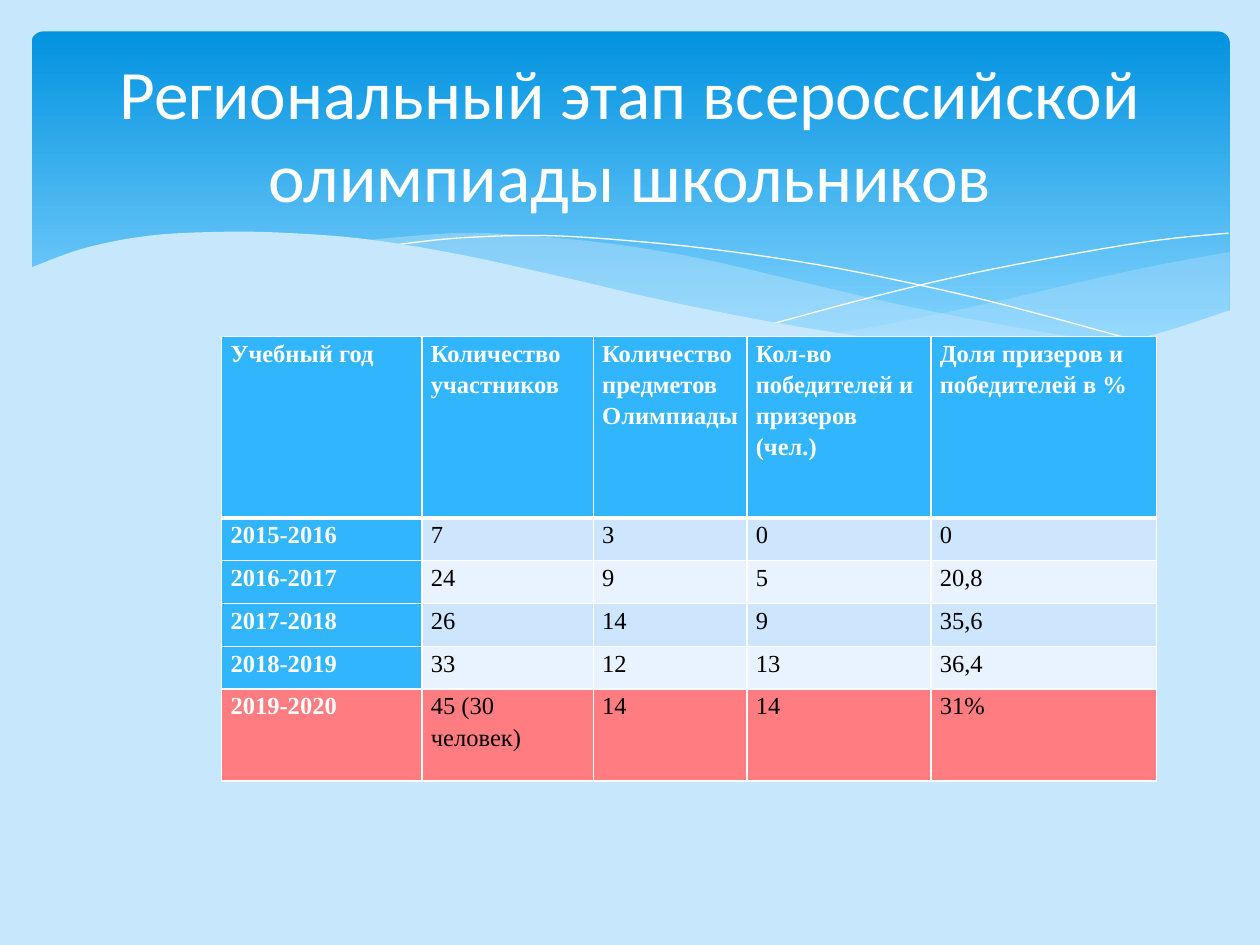
from dataclasses import dataclass

from lxml import etree
from pptx import Presentation
from pptx.dml.color import RGBColor
from pptx.enum.shapes import MSO_SHAPE
from pptx.enum.text import MSO_ANCHOR, PP_ALIGN
from pptx.oxml.ns import qn
from pptx.util import Inches, Pt

ROUNDED = MSO_SHAPE.ROUNDED_RECTANGLE
MIDDLE = MSO_ANCHOR.MIDDLE
LEFT, CENTER, JUSTIFY = PP_ALIGN.LEFT, PP_ALIGN.CENTER, PP_ALIGN.JUSTIFY


@dataclass(frozen=True)
class Theme:
    sky: str = "C6E7FC"
    banner_top: str = "0293E0"
    banner_bottom: str = "83D3FE"
    white: str = "FFFFFF"
    black: str = "000000"
    header: str = "31B6FD"
    bands: tuple = ("CEE5FE", "E8F3FF")
    highlight: str = "FF7C80"
    title_font: str = "Calibri"
    table_font: str = "Times New Roman"
    title_size: float = 39.6
    table_size: float = 14


TITLE = "Региональный этап всероссийской олимпиады школьников"
HEADINGS = ["Учебный год", "Количество участников", "Количество предметов Олимпиады",
            "Кол-во победителей и призеров (чел.)", "Доля призеров и победителей в %"]
RESULTS = [
    ["2015-2016", "7", "3", "0", "0"],
    ["2016-2017", "24", "9", "5", "20,8"],
    ["2017-2018", "26", "14", "9", "35,6"],
    ["2018-2019", "33", "12", "13", "36,4"],
    ["2019-2020", "45 (30 человек)", "14", "14", "31%"],
]
COLUMN_WIDTHS = [1.59, 1.36, 1.22, 1.46, 1.79]
ROW_HEIGHTS = [1.44, 0.34, 0.34, 0.34, 0.34, 0.73]

# Knots of the curves that bound each wave, in inches
RIGHT_BAND = [
    [(9.76, 2), (9.21, 2.1), (8.61, 2.23), (7.79, 2.42), (7.06, 2.57), (6.61, 2.65)],
    [(6.61, 2.65), (7.05, 2.71), (7.57, 2.76), (8.14, 2.78), (8.72, 2.74),
     (9.21, 2.65), (9.76, 2.47)],
]
MIDDLE_BAND = [
    [(8.93, 2.73), (8.37, 2.65), (7.75, 2.54), (7.06, 2.4), (6.29, 2.22), (5.55, 2.05),
     (4.89, 1.94), (4.2, 1.87), (3.61, 1.85), (2.86, 1.91)],
    [(2.86, 1.91), (3.62, 2.03), (4.49, 2.22), (5.3, 2.4), (6.01, 2.55), (6.8, 2.68),
     (7.48, 2.76), (8.18, 2.78), (8.93, 2.73)],
]
FALLING_LINE = [[(3.09, 1.95), (3.63, 1.89), (4.33, 1.87), (5.1, 1.92), (5.82, 2),
                 (6.65, 2.13), (7.6, 2.33), (8.31, 2.51), (9.07, 2.72)]]
RISING_LINE = [[(6.13, 2.57), (6.95, 2.35), (7.76, 2.16), (8.66, 1.99), (9.24, 1.9),
                (9.75, 1.85)]]
FRONT_WAVE = [
    [(9.77, 2.46), (9.1, 2.67), (8.5, 2.75), (7.78, 2.76), (7.08, 2.7), (6.26, 2.58),
     (5.29, 2.39), (4.47, 2.2), (3.65, 2.02), (2.92, 1.9), (2.3, 1.85), (1.77, 1.84),
     (1.19, 1.87), (0.67, 1.97), (0.23, 2.13)],
    [(0.23, 3.29), (9.77, 3.29)],
]


def smooth_curve(knots, steps=6):
    """Sample a Catmull-Rom spline that passes through every knot."""
    if len(knots) == 2:
        return knots
    padded = [knots[0], *knots, knots[-1]]
    points = []
    for a, b, c, d in zip(padded, padded[1:], padded[2:], padded[3:]):
        for step in range(steps):
            t = step / steps
            points.append(tuple(
                0.5 * (2 * q + (r - p) * t + (2 * p - 5 * q + 4 * r - s) * t ** 2
                       + (3 * q - p - 3 * r + s) * t ** 3)
                for p, q, r, s in zip(a, b, c, d)))
    return points + [knots[-1]]


def paint(fill, color):
    fill.solid()
    fill.fore_color.rgb = RGBColor.from_string(color)


class SlideBuilder:
    def __init__(self, slide, theme):
        self.slide, self.theme = slide, theme
        paint(slide.background.fill, theme.sky)

    def add_run(self, paragraph, text, font, size, color, bold=False):
        run = paragraph.add_run()
        run.text = text
        run.font.name, run.font.size, run.font.bold = font, Pt(size), bold
        run.font.color.rgb = RGBColor.from_string(color)

    def banner(self, left, top, width, height):
        banner = self.slide.shapes.add_shape(
            ROUNDED, Inches(left), Inches(top), Inches(width), Inches(height))
        banner.adjustments[0] = 0.034
        banner.shadow.inherit = False
        banner.line.fill.background()
        banner.fill.gradient()
        banner.fill.gradient_angle = 270
        colors = (self.theme.banner_top, self.theme.banner_bottom)
        for stop, position, color in zip(banner.fill.gradient_stops, (0, 0.9), colors):
            stop.position = position
            stop.color.rgb = RGBColor.from_string(color)

    def outline(self, curves, close):
        points = [(Inches(x), Inches(y)) for knots in curves for x, y in smooth_curve(knots)]
        builder = self.slide.shapes.build_freeform(*points[0])
        builder.add_line_segments(points[1:], close=close)
        shape = builder.convert_to_shape()
        shape.shadow.inherit = False
        return shape

    def wave(self, curves, opacity=100):
        wave = self.outline(curves, close=True)
        wave.line.fill.background()
        paint(wave.fill, self.theme.sky)
        color = wave.fill._xPr.find(qn("a:solidFill"))[0]
        etree.SubElement(color, qn("a:alpha"), val=str(opacity * 1000))

    def wave_line(self, curves):
        line = self.outline(curves, close=False)
        line.fill.background()
        line.line.width = Pt(0)
        line.line.color.rgb = RGBColor.from_string(self.theme.white)

    def title(self, text, left, top, width, height):
        frame = self.slide.shapes.add_textbox(
            Inches(left), Inches(top), Inches(width), Inches(height)).text_frame
        frame.word_wrap = True
        frame.vertical_anchor = MIDDLE
        frame.paragraphs[0].alignment = CENTER
        self.add_run(frame.paragraphs[0], text, self.theme.title_font,
                     self.theme.title_size, self.theme.white)

    def borders(self, cell, bottom_width):
        properties = cell._tc.get_or_add_tcPr()
        widths = {"a:lnL": 1, "a:lnR": 1, "a:lnT": 1, "a:lnB": bottom_width}
        for index, (tag, width) in enumerate(widths.items()):
            line = etree.Element(qn(tag), w=str(Pt(width)))
            solid = etree.SubElement(line, qn("a:solidFill"))
            etree.SubElement(solid, qn("a:srgbClr"), val=self.theme.white)
            properties.insert(index, line)

    def cell(self, cell, text, fill, is_heading, alignment=LEFT, bottom_width=1):
        theme = self.theme
        cell.margin_left = cell.margin_right = Inches(0.07)
        cell.margin_top = cell.margin_bottom = 0
        paint(cell.fill, fill)
        self.borders(cell, bottom_width)
        paragraph = cell.text_frame.paragraphs[0]
        paragraph.alignment = alignment
        paragraph.line_spacing, paragraph.space_after = 1.15, Pt(10)
        self.add_run(paragraph, text, theme.table_font, theme.table_size,
                     theme.white if is_heading else theme.black, is_heading)

    def results_table(self, left, top):
        theme = self.theme
        table = self.slide.shapes.add_table(
            len(ROW_HEIGHTS), len(COLUMN_WIDTHS), Inches(left), Inches(top),
            Inches(sum(COLUMN_WIDTHS)), Inches(sum(ROW_HEIGHTS))).table
        for column, width in zip(table.columns, COLUMN_WIDTHS):
            column.width = Inches(width)
        for row, height in zip(table.rows, ROW_HEIGHTS):
            row.height = Inches(height)
        for index, heading in enumerate(HEADINGS):
            self.cell(table.cell(0, index), heading, theme.header, True, bottom_width=3)
        for row, (year, *values) in enumerate(RESULTS, start=1):
            is_latest = row == len(RESULTS)
            year_fill = theme.highlight if is_latest else theme.header
            value_fill = theme.highlight if is_latest else theme.bands[(row - 1) % 2]
            self.cell(table.cell(row, 0), year, year_fill, True, JUSTIFY if row > 2 else LEFT)
            for column, value in enumerate(values, start=1):
                self.cell(table.cell(row, column), value, value_fill, False)


def main():
    presentation = Presentation()
    presentation.slide_width, presentation.slide_height = Inches(10), Inches(7.5)
    slide = presentation.slides.add_slide(presentation.slide_layouts[6])
    builder = SlideBuilder(slide, Theme())
    builder.banner(0.25, 0.25, 9.51, 2.7)
    builder.wave(RIGHT_BAND, opacity=29)
    builder.wave(MIDDLE_BAND, opacity=40)
    builder.wave_line(FALLING_LINE)
    builder.wave_line(RISING_LINE)
    builder.wave(FRONT_WAVE)
    builder.results_table(1.76, 2.67)
    builder.title(TITLE, 0.5, 0.37, 9, 1.37)
    presentation.save("out.pptx")


if __name__ == "__main__":
    main()
